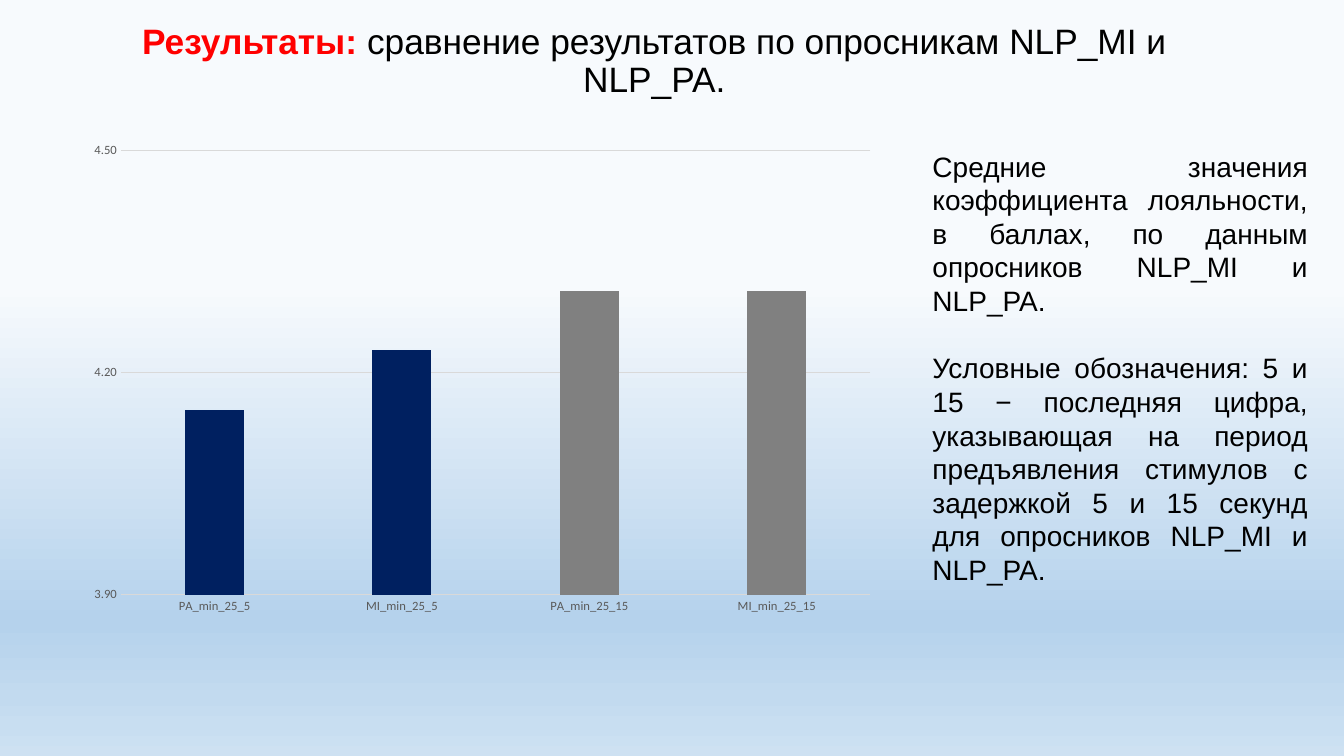
from lxml import etree
from pptx import Presentation
from pptx.chart.data import CategoryChartData
from pptx.dml.color import RGBColor
from pptx.enum.chart import XL_CHART_TYPE as Chart, XL_TICK_MARK as Tick
from pptx.enum.text import MSO_ANCHOR as Anchor, PP_ALIGN as Align
from pptx.oxml import parse_xml
from pptx.oxml.ns import nsdecls, qn
from pptx.util import Inches, Pt

W, H = 13.33, 7.5
NAVY, GRAY, RULE, LABEL = "002060", "808080", "D9D9D9", "595959"


def color(value):
    return RGBColor.from_string(value)


def style(font, size, value, name="Arial", bold=False):
    font.name, font.size, font.bold = name, Pt(size), bold
    font.color.rgb = color(value)


prs = Presentation()
prs.slide_width, prs.slide_height = Inches(W), Inches(H)
s = prs.slides.add_slide(prs.slide_layouts[6])

# Background: vertical gradient
fill = s.background.fill
fill.gradient()
fill.gradient_angle = 270
stop_list = s.background._cSld.find(".//" + qn("a:gsLst"))
for stop in list(stop_list):
    stop_list.remove(stop)
for share, tint in [(38, "F7FAFD"), (82, "B5D2EC"), (92, "C2DAEF"),
                    (96, "C8DEF1"), (100, "CEE1F2")]:
    stop = etree.SubElement(stop_list, qn("a:gs"), pos=str(share * 1000))
    etree.SubElement(stop, qn("a:srgbClr"), val=tint)

# Title, raised above the middle of its box
sp = s.shapes.add_textbox(Inches(0.74), Inches(0.35), Inches(11.5), Inches(0.97))
tf = sp.text_frame
tf.word_wrap, tf.vertical_anchor = True, Anchor.MIDDLE
tf.margin_bottom = Inches(0.48)
p = tf.paragraphs[0]
p.alignment, p.line_spacing = Align.CENTER, 0.9
for text, tint, bold in [
        ("Результаты: ", "FF0000", True),
        ("сравнение результатов по опросникам NLP_MI и NLP_PA.", "000000", False)]:
    r = p.add_run()
    r.text = text
    style(r.font, 25.2, tint, bold=bold)

# Column chart
data = CategoryChartData(number_format="0.00")
data.categories = ["PA_min_25_5", "MI_min_25_5", "PA_min_25_15", "MI_min_25_15"]
data.add_series("Series 1", [4.15, 4.23, 4.31, 4.31])
chart = s.shapes.add_chart(Chart.COLUMN_CLUSTERED, Inches(0.74), Inches(1.19),
                           Inches(8.18), Inches(5.06), data).chart
chart.has_legend = chart.has_title = False
style(chart.font, 10, "000000", "Calibri")

plot = chart.plots[0]
plot.gap_width, plot.overlap, plot.vary_by_categories = 219, -27, False
bars = plot.series[0]
bars.format.fill.solid()
bars.format.fill.fore_color.rgb = color(NAVY)
for i in (2, 3):
    point_fill = bars.points[i].format.fill
    point_fill.solid()
    point_fill.fore_color.rgb = color(GRAY)

# Axes and gridlines
cat, val = chart.category_axis, chart.value_axis
for axis in (cat, val):
    axis.major_tick_mark = axis.minor_tick_mark = Tick.NONE
    style(axis.tick_labels.font, 9, LABEL, "Calibri")
val.minimum_scale, val.maximum_scale, val.major_unit = 3.9, 4.5, 0.3
val.tick_labels.number_format = "0.00"
val.tick_labels.number_format_is_linked = False
val.format.line.fill.background()
for line in (cat.format.line, val.major_gridlines.format.line):
    line.color.rgb, line.width = color(RULE), Pt(0.75)

# Fixed plot area, as shares of the chart
area = chart._chartSpace.chart.plotArea
for old in area.findall(qn("c:layout")):
    area.remove(old)
area.insert(0, parse_xml(
    f'<c:layout {nsdecls("c")}><c:manualLayout><c:layoutTarget val="inner"/>'
    '<c:xMode val="edge"/><c:yMode val="edge"/><c:x val="0.056"/><c:y val="0.06"/>'
    '<c:w val="0.909"/><c:h val="0.871"/></c:manualLayout></c:layout>'))

# Explanation on the right
sp = s.shapes.add_textbox(Inches(9.15), Inches(1.43), Inches(3.92), Inches(4.81))
tf = sp.text_frame
tf.word_wrap = True
tf.text = (
    "Средние значения коэффициента лояльности, в баллах, по данным опросников "
    "NLP_MI и NLP_PA.\n"
    "Условные обозначения: 5 и 15 − последняя цифра, указывающая на период "
    "предъявления стимулов с задержкой 5 и 15 секунд для опросников NLP_MI и NLP_PA.")
for p in tf.paragraphs:
    p.alignment = Align.JUSTIFY
    style(p.runs[0].font, 20, "000000")
tf.paragraphs[0].space_after = Pt(24)

prs.save("out.pptx")
